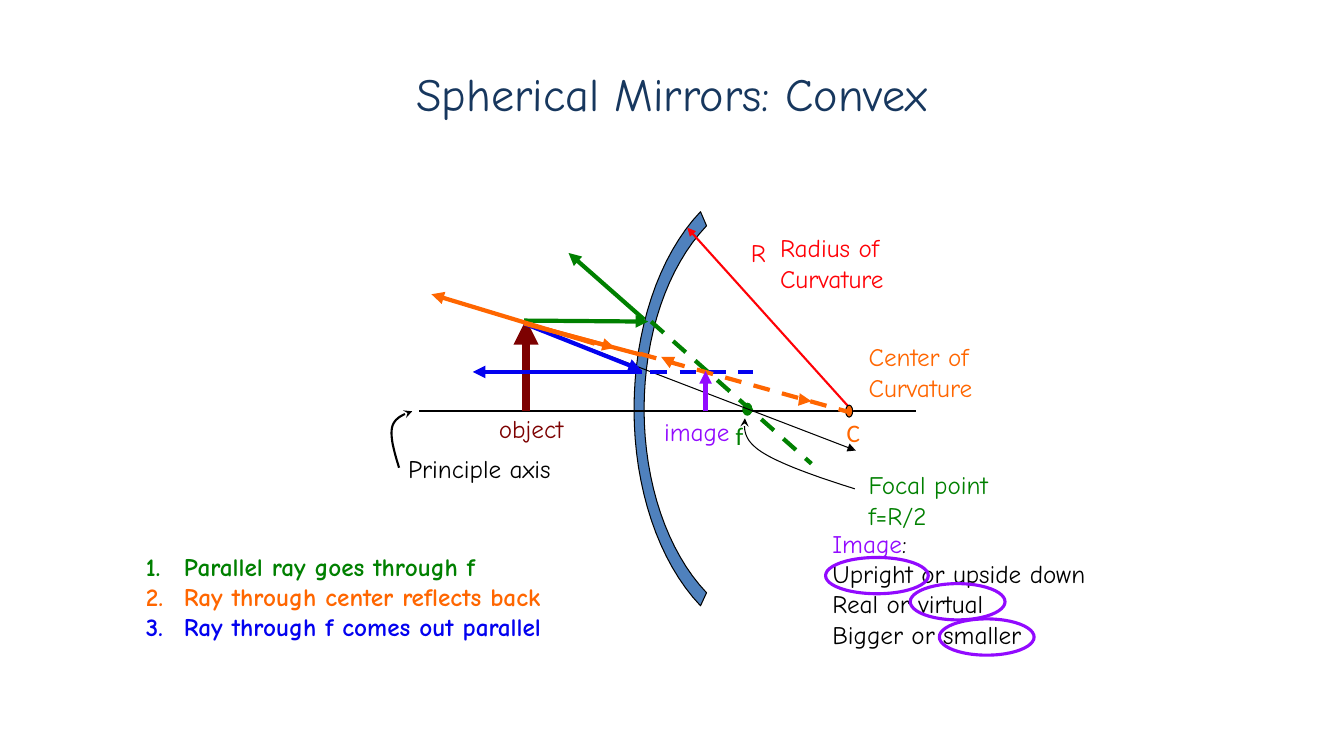
from lxml import etree
from pptx import Presentation
from pptx.dml.color import RGBColor
from pptx.enum.dml import MSO_LINE
from pptx.enum.shapes import MSO_CONNECTOR, MSO_SHAPE
from pptx.enum.text import MSO_ANCHOR, MSO_AUTO_SIZE, PP_ALIGN
from pptx.oxml.ns import qn
from pptx.util import Pt

STRAIGHT, OVAL, DASH = MSO_CONNECTOR.STRAIGHT, MSO_SHAPE.OVAL, MSO_LINE.DASH
MIDDLE, CENTER, GROW = MSO_ANCHOR.MIDDLE, PP_ALIGN.CENTER, MSO_AUTO_SIZE.SHAPE_TO_FIT_TEXT

THEME = {
    "font": "Comic Neue", "symbol_font": "Calibri", "title_size": 33, "text_size": 18,
    "navy": "17375E", "mirror": "4F81BD", "black": "000000", "white": "FFFFFF",
    "red": "FF0207", "maroon": "7D0101", "green": "008000", "orange": "FF6600",
    "blue": "0302EF", "purple": "920AFF",
}

# Content, all lengths in points
AXIS_Y = 293.8
TITLE = "Spherical Mirrors: Convex"

# Outlines: start, then cubic curves (3 points) or straight edges (1 point)
MIRROR = [(504.7, 161.3),
          [(476.6, 190.8), (460.1, 239.8), (460.1, 292.3)],
          [(460.1, 344.9), (476.6, 393.8), (504.7, 423.4)],
          [(500.4, 432.7)],
          [(470.2, 401), (452.9, 348.5), (452.9, 292.3)],
          [(452.9, 236.2), (470.2, 182.9), (500.4, 151.2)],
          [(504.7, 161.3)]]
POINTERS = [
    (1.5, [(285.1, 334.1),
           [(281.5, 322.6), (278.6, 311.8), (280.1, 305.3)],
           [(281.5, 298.8), (288, 295.9), (294.5, 293.8)]]),
    (0.75, [(610.6, 349.2),
            [(583.2, 340.6), (556.6, 331.2), (543.6, 322.6)],
            [(530.6, 313.9), (531.4, 306), (532.1, 298.8)]]),
]

# from x, y, to x, y, colour, width, dashed, arrow
BASE_LINES = [
    (299.5, AXIS_Y, 654.5, AXIS_Y, "black", 1.5, False, False),
    (609.1, AXIS_Y, 491, 162.7, "red", 1.5, False, True),
]
RAYS = [
    (375.8, AXIS_Y, 375.8, 228.2, "maroon", 6, False, True),
    (374.4, 229, 463, 229.7, "green", 3, False, True),
    (465.1, 229.7, 579.6, 331.2, "green", 3, True, False),
    (460.1, 228.2, 406.1, 180.7, "green", 3, False, True),
    (375.1, 231.1, 611.3, 321.8, "black", 0.75, False, True),
    (374.4, 231.1, 457.9, 264.2, "blue", 3, False, True),
    (458.6, 265.7, 337.7, 265.7, "blue", 3, False, True),
    (464.4, 265.7, 537.8, 265.7, "blue", 3, True, False),
    (391, 235.4, 439.2, 248.4, "orange", 3, False, True),
    (374.4, 231.1, 457.9, 253.4, "orange", 3, False, False),
    (573.8, 285.8, 579.6, 286.6, "orange", 3, True, True),
    (457.2, 252.7, 607, 294.5, "orange", 3, True, False),
    (481, 259.2, 472.3, 254.9, "orange", 3, True, True),
    (424.8, 245.5, 308.2, 210.2, "orange", 3, False, True),
    (504, AXIS_Y, 504, 265, "purple", 3, False, True),
]

# left, top, width, height, fill, line colour, line width
DOTS = [(604.1, 289.4, 5, 8.6, "orange", "black", 0.75),
        (530.6, 288, 6.5, 8.6, "green", "green", 0.75)]
ANSWER_OVALS = [(589.7, 398.2, 73.4, 25.9, None, "purple", 2.25),
                (650.2, 416.9, 67.7, 25.9, None, "purple", 2.25),
                (671, 442.1, 67.7, 25.9, None, "purple", 2.25)]

# left, top, width, font, lines of (text, colour) runs
LABELS = [
    (550.1, 162.7, 98.6, "font", [[("Radius of", "red")], [("Curvature", "red")]]),
    (284.4, 320.4, 125.3, "font", [[("Principle axis", "black")]]),
    (613.4, 331.9, 106.6, "font", [[("Focal point", "green")], [("f=R/2", "green")]]),
    (613.4, 240.5, 98.6, "font", [[("Center of", "orange")], [("Curvature", "orange")]]),
    (529.2, 166.3, 25.9, "font", [[("R", "red")]]),
    (597.6, 294.5, 24.5, "symbol_font", [[("C", "orange")]]),
    (518.4, 296.6, 20.2, "symbol_font", [[("f", "green")]]),
    (349.2, 291.6, 69.8, "font", [[("object", "maroon")]]),
    (467.3, AXIS_Y, 62.6, "font", [[("image", "purple")]]),
    (587.5, 373.7, 211, "font", [[("Image", "purple"), (":", "black")],
                                 [("Upright or upside down", "black")],
                                 [("Real or virtual", "black")],
                                 [("Bigger or smaller", "black")]]),
]
RULES = (97.2, 390.2, 338.4, "font", [[("Parallel ray goes through f", "green")],
                                      [("Ray through center reflects back", "orange")],
                                      [("Ray through f comes out parallel", "blue")]])
RULE_INDENT = 27

prs = Presentation()
prs.slide_width, prs.slide_height = Pt(960), Pt(540)
s = prs.slides.add_slide(prs.slide_layouts[6])


def color(name):
    return RGBColor.from_string(THEME[name])


def style_line(line, name, width, arrow=None):
    line.color.rgb = color(name)
    line.width = Pt(width)
    if arrow:
        etree.SubElement(line._get_or_add_ln(), qn("a:tailEnd"), type=arrow)


def add_line(x1, y1, x2, y2, name, width, dashed, arrow):
    c = s.shapes.add_connector(STRAIGHT, Pt(x1), Pt(y1), Pt(x2), Pt(y2))
    if dashed:
        c.line.dash_style = DASH
    style_line(c.line, name, width, "triangle" if arrow else None)
    etree.SubElement(c._element.spPr, qn("a:effectLst"))


def add_outline(outline, width, fill=None, arrow=None, steps=16):
    start, *segments = outline
    points = [start]
    for seg in segments:
        if len(seg) == 1:
            points += seg
            continue
        curve = [points[-1], *seg]
        for i in range(1, steps + 1):
            t = i / steps
            weights = ((1 - t) ** 3, 3 * t * (1 - t) ** 2, 3 * t * t * (1 - t), t ** 3)
            points.append(tuple(sum(w * pt[k] for w, pt in zip(weights, curve))
                                for k in (0, 1)))
    fb = s.shapes.build_freeform(Pt(start[0]), Pt(start[1]))
    fb.add_line_segments([(Pt(x), Pt(y)) for x, y in points[1:]], close=bool(fill))
    finish_shape(fb.convert_to_shape(), fill, "black", width, arrow)


def finish_shape(sp, fill, line, width, arrow=None):
    sp.shadow.inherit = False
    if fill:
        sp.fill.solid()
        sp.fill.fore_color.rgb = color(fill)
    else:
        sp.fill.background()
    style_line(sp.line, line, width, arrow)


def add_oval(x, y, w, h, fill, line, width):
    sp = s.shapes.add_shape(OVAL, Pt(x), Pt(y), Pt(w), Pt(h))
    finish_shape(sp, fill, line, width)


def add_run(p, text, name, font="font", size="text_size", bold=False):
    r = p.add_run()
    r.text = text
    r.font.name, r.font.size, r.font.bold = THEME[font], Pt(THEME[size]), bold
    r.font.color.rgb = color(name)


def add_label(x, y, w, font, lines, numbered=False):
    sp = s.shapes.add_textbox(Pt(x), Pt(y), Pt(w), Pt(7.2 + 21.7 * len(lines)))
    tf = sp.text_frame
    tf.word_wrap, tf.auto_size = False, GROW
    for i, runs in enumerate(lines):
        p = tf.add_paragraph() if i else tf.paragraphs[0]
        if numbered:
            pPr = p._p.get_or_add_pPr()
            pPr.set("marL", str(Pt(RULE_INDENT)))
            pPr.set("indent", str(-Pt(RULE_INDENT)))
            etree.SubElement(pPr, qn("a:buFont"), typeface=THEME[font])
            etree.SubElement(pPr, qn("a:buAutoNum"), type="arabicPeriod")
        for text, name in runs:
            add_run(p, text, name, font, bold=numbered)
    return sp


# Title
title = s.shapes.add_textbox(Pt(48), Pt(21.6), Pt(864), Pt(90))
tf = title.text_frame
tf.word_wrap, tf.vertical_anchor = True, MIDDLE
tf.paragraphs[0].alignment = CENTER
add_run(tf.paragraphs[0], TITLE, "navy", size="title_size")

# Mirror, axis and radius
add_outline(MIRROR, 0.75, fill="mirror")
for line in BASE_LINES:
    add_line(*line)

# Ray rules
rules = add_label(*RULES, numbered=True)
rules.fill.solid()
rules.fill.fore_color.rgb = color("white")

# Points, rays and pointers
for dot in DOTS:
    add_oval(*dot)
for ray in RAYS:
    add_line(*ray)
for width, outline in POINTERS:
    add_outline(outline, width, arrow="stealth")

# Labels and circled answers
for label in LABELS:
    add_label(*label)
for oval in ANSWER_OVALS:
    add_oval(*oval)

prs.save("out.pptx")
